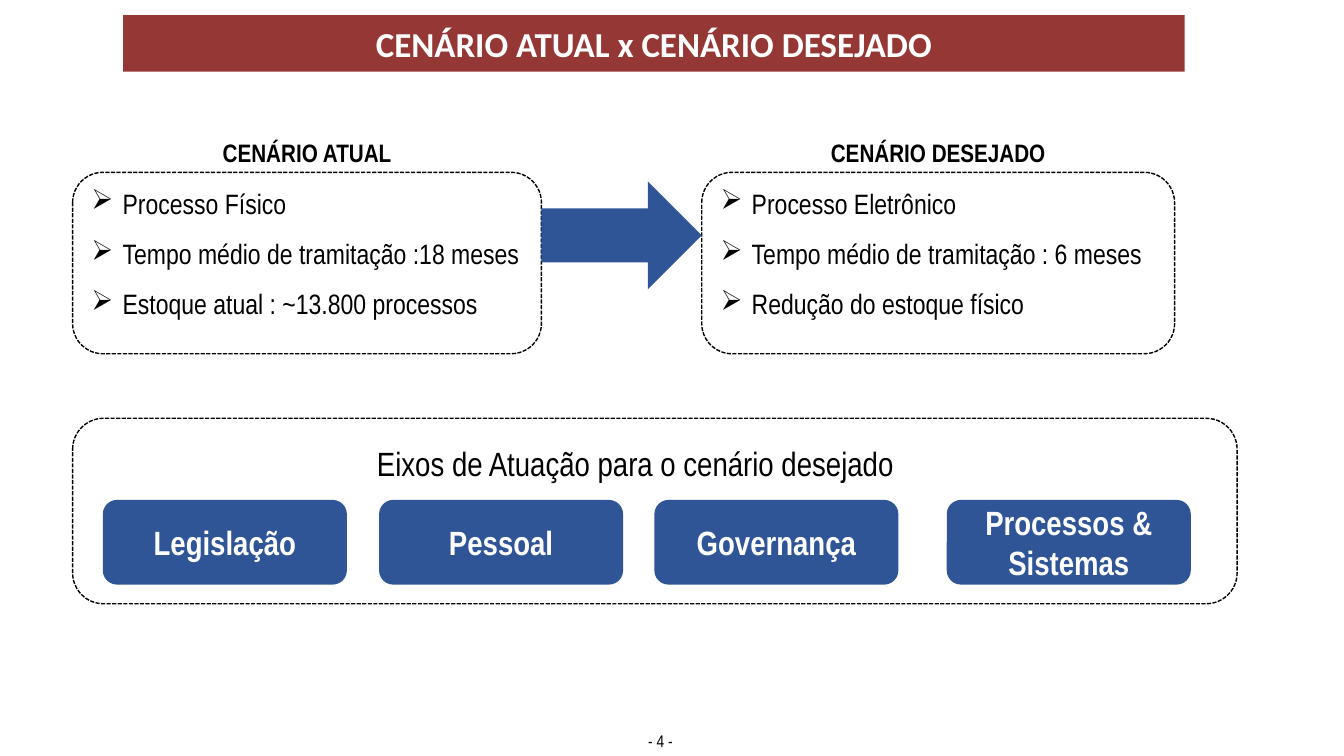
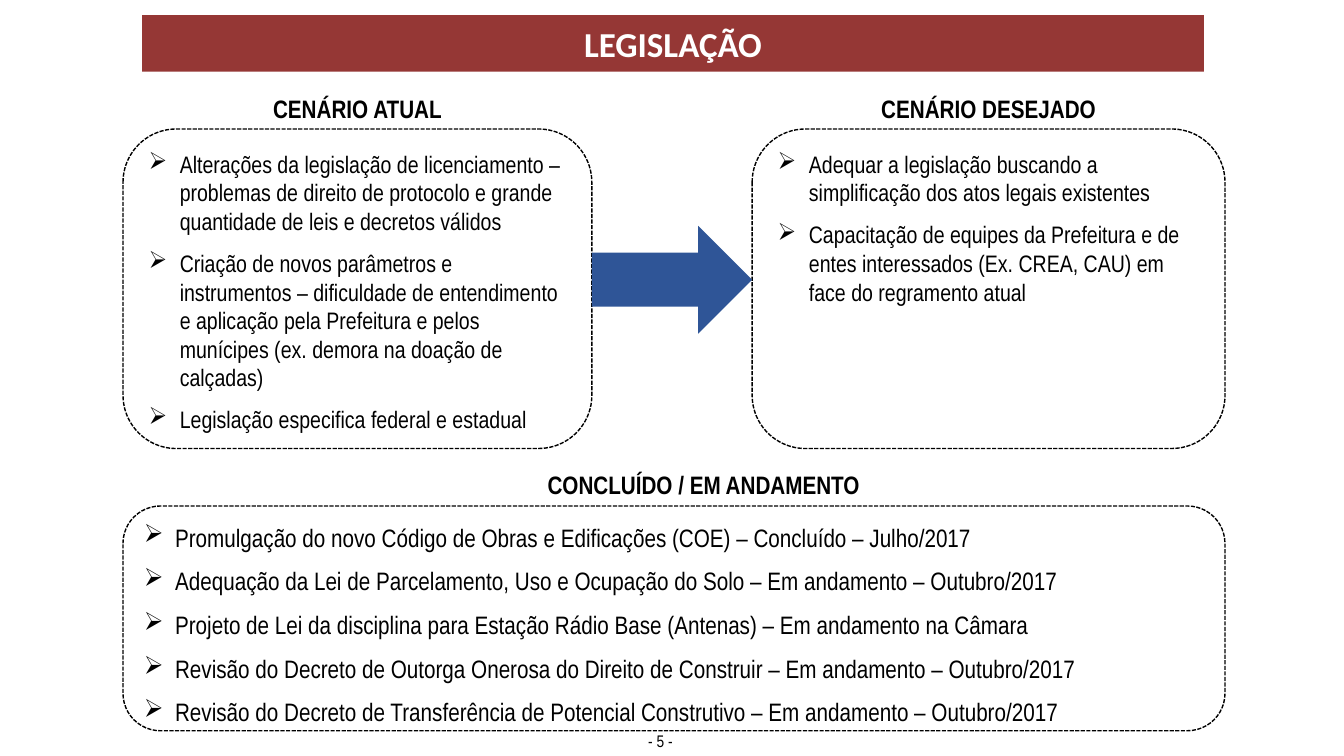
import pptx
import pptx.dml.color
import pptx.enum.dml
import pptx.enum.shapes
import pptx.enum.text
import pptx.oxml
import pptx.oxml.ns
import pptx.util
from pptx.dml.color import RGBColor
from pptx.enum.shapes import MSO_SHAPE
from pptx.enum.text import MSO_ANCHOR, MSO_AUTO_SIZE, PP_ALIGN
from pptx.util import Inches, Pt

RED = RGBColor(0x95, 0x37, 0x35)
BLUE = RGBColor(0x2F, 0x55, 0x97)
BLACK = RGBColor(0, 0, 0)
WHITE = RGBColor(0xFF, 0xFF, 0xFF)

BODY = {"name": "Arial Narrow", "size": 18, "bold": False, "color": BLACK}
HEADING = BODY | {"bold": True}
AXIS = BODY | {"size": 24, "bold": True, "color": WHITE}
BAND = {"name": "Calibri", "size": 25, "bold": True, "color": WHITE}

BAND_TOP, BAND_WIDTH, BAND_HEIGHT = 0.15, 10.53, 0.56
CURRENT_WIDTH, DESIRED_WIDTH, SCENARIO_GAP = 4.65, 4.69, 1.59
ARROW_HEIGHT = 1.07
HEADING_HEIGHT = 0.4
INDENT = 0.31

SLIDES = [
    {
        "title": "CENÁRIO ATUAL x CENÁRIO DESEJADO",
        "band_left": 1.22,
        "number": 4,
        "left": 0.72, "top": 1.71, "height": 1.8, "arrow_top": 1.8,
        "size": 20, "gap": 12,
        "current": [
            "Processo Físico",
            "Tempo médio de tramitação :18 meses",
            "Estoque atual : ~13.800 processos",
        ],
        "desired": [
            "Processo Eletrônico",
            "Tempo médio de tramitação : 6 meses",
            "Redução do estoque físico",
        ],
    },
    {
        "title": "LEGISLAÇÃO",
        "band_left": 1.41,
        "number": 5,
        "left": 1.22, "top": 1.28, "height": 3.17, "arrow_top": 2.24,
        "size": 17, "gap": 9.6,
        "current": [
            "Alterações da legislação de licenciamento – problemas de direito de "
            "protocolo e grande quantidade de leis e decretos válidos",
            "Criação de novos parâmetros e instrumentos – dificuldade de entendimento "
            "e aplicação pela Prefeitura e pelos munícipes (ex. demora na doação de "
            "calçadas)",
            "Legislação especifica federal e estadual",
        ],
        "desired": [
            "Adequar a legislação buscando a simplificação dos atos legais existentes",
            "Capacitação de equipes da Prefeitura e de entes interessados "
            "(Ex. CREA, CAU) em face do regramento atual",
        ],
    },
]

AXES_HEADING = "Eixos de Atuação para o cenário desejado"
AXES = [
    ("Legislação", 1.02),
    ("Pessoal", 3.76),
    ("Governança", 6.49),
    ("Processos & Sistemas", 9.39),
]

PROGRESS_HEADING = "CONCLUÍDO / EM ANDAMENTO"
PROGRESS = [
    "Promulgação do novo Código de Obras e Edificações (COE) – Concluído – Julho/2017",
    "Adequação da Lei de Parcelamento, Uso e Ocupação do Solo – Em andamento – Outubro/2017",
    "Projeto de Lei da disciplina para Estação Rádio Base (Antenas) – Em andamento na Câmara",
    "Revisão do Decreto de Outorga Onerosa do Direito de Construir – Em andamento – Outubro/2017",
    "Revisão do Decreto de Transferência de Potencial Construtivo – Em andamento – Outubro/2017",
]


def write(paragraph, text, style, align=PP_ALIGN.CENTER):
    paragraph.alignment = align
    run = paragraph.add_run()
    run.text = text
    run.font.color.rgb = style["color"]
    for key, value in (style | {"size": Pt(style["size"])}).items():
        if key != "color":
            setattr(run.font, key, value)


def add_filled(slide, kind, box, fill=None):
    """Add a preset shape with a plain fill, or none, and no outline or shadow."""
    shape = slide.shapes.add_shape(kind, *map(Inches, box))
    shape.shadow.inherit = False
    shape.line.fill.background()
    if fill is None:
        shape.fill.background()
    else:
        shape.fill.solid()
        shape.fill.fore_color.rgb = fill
    return shape


def add_panel(slide, box, items=(), size=18, gap=9.6):
    """Add a dashed rounded panel holding a list with arrow bullets."""
    panel = add_filled(slide, MSO_SHAPE.ROUNDED_RECTANGLE, box)
    panel.line.color.rgb = BLACK
    panel.line.width = Pt(1)
    panel.line.dash_style = pptx.enum.dml.MSO_LINE.SQUARE_DOT
    frame = panel.text_frame
    frame.vertical_anchor = MSO_ANCHOR.TOP
    for index, item in enumerate(items):
        paragraph = frame.add_paragraph() if index else frame.paragraphs[0]
        write(paragraph, item, BODY | {"size": size}, PP_ALIGN.LEFT)
        paragraph.space_after = Pt(gap)
        properties = paragraph._p.get_or_add_pPr()
        properties.set("marL", str(Inches(INDENT)))
        properties.set("indent", str(-Inches(INDENT)))
        bullet = pptx.oxml.parse_xml(
            f'<a:buChar {pptx.oxml.ns.nsdecls("a")} char="➢"/>')
        properties.append(bullet)


def add_label(slide, text, center, top, width, style=HEADING):
    box = (center - width / 2, top, width, HEADING_HEIGHT)
    label = slide.shapes.add_textbox(*map(Inches, box))
    label.text_frame.word_wrap = True
    write(label.text_frame.paragraphs[0], text, style)


def add_band(slide, text, left):
    """Turn the title placeholder into the rounded red band."""
    title = slide.shapes.title
    place = {"left": left, "top": BAND_TOP, "width": BAND_WIDTH, "height": BAND_HEIGHT}
    for key, value in place.items():
        setattr(title, key, Inches(value))
    outline = pptx.oxml.parse_xml(
        f'<a:prstGeom {pptx.oxml.ns.nsdecls("a")} prst="roundRect"><a:avLst/></a:prstGeom>')
    title._element.spPr.append(outline)
    title.fill.solid()
    title.fill.fore_color.rgb = RED
    frame = title.text_frame
    frame.auto_size = MSO_AUTO_SIZE.NONE
    frame.vertical_anchor = MSO_ANCHOR.MIDDLE
    write(frame.paragraphs[0], text, BAND)


def add_scenarios(slide, content):
    """Add the current and desired panels with the arrow that joins them."""
    top, height = content["top"], content["height"]
    arrow_left = content["left"] + CURRENT_WIDTH
    columns = [
        ("CENÁRIO ATUAL", "current", content["left"], CURRENT_WIDTH),
        ("CENÁRIO DESEJADO", "desired", arrow_left + SCENARIO_GAP, DESIRED_WIDTH),
    ]
    for heading, key, left, width in columns:
        add_panel(slide, (left, top, width, height), content[key],
                  content["size"], content["gap"])
        add_label(slide, heading, left + width / 2, top - HEADING_HEIGHT, width)
    arrow = (arrow_left, content["arrow_top"], SCENARIO_GAP, ARROW_HEIGHT)
    add_filled(slide, MSO_SHAPE.RIGHT_ARROW, arrow, BLUE)


def add_axes(slide):
    add_panel(slide, (0.72, 4.15, 11.55, 1.84))
    add_label(slide, AXES_HEADING, 6.3, 4.34, 6, BODY | {"size": 24})
    for name, left in AXES:
        axis = add_filled(slide, MSO_SHAPE.ROUNDED_RECTANGLE,
                          (left, 4.96, 2.42, 0.84), BLUE)
        axis.text_frame.vertical_anchor = MSO_ANCHOR.MIDDLE
        write(axis.text_frame.paragraphs[0], name, AXIS)


def add_progress(slide):
    add_panel(slide, (1.22, 5.02, 10.93, 2.23), PROGRESS)
    add_label(slide, PROGRESS_HEADING, 6.98, 4.61, 5)


def main():
    deck = pptx.Presentation()
    deck.slide_width, deck.slide_height = Inches(13.33), Inches(7.5)
    title_only = deck.slide_layouts[5]
    for content, add_lower_part in zip(SLIDES, (add_axes, add_progress)):
        slide = deck.slides.add_slide(title_only)
        add_band(slide, content["title"], content["band_left"])
        add_scenarios(slide, content)
        add_lower_part(slide)
        add_label(slide, f"- {content['number']} -", 6.55, 7.2, 0.61,
                  BODY | {"size": 12})
    deck.save("out.pptx")


if __name__ == "__main__":
    main()
